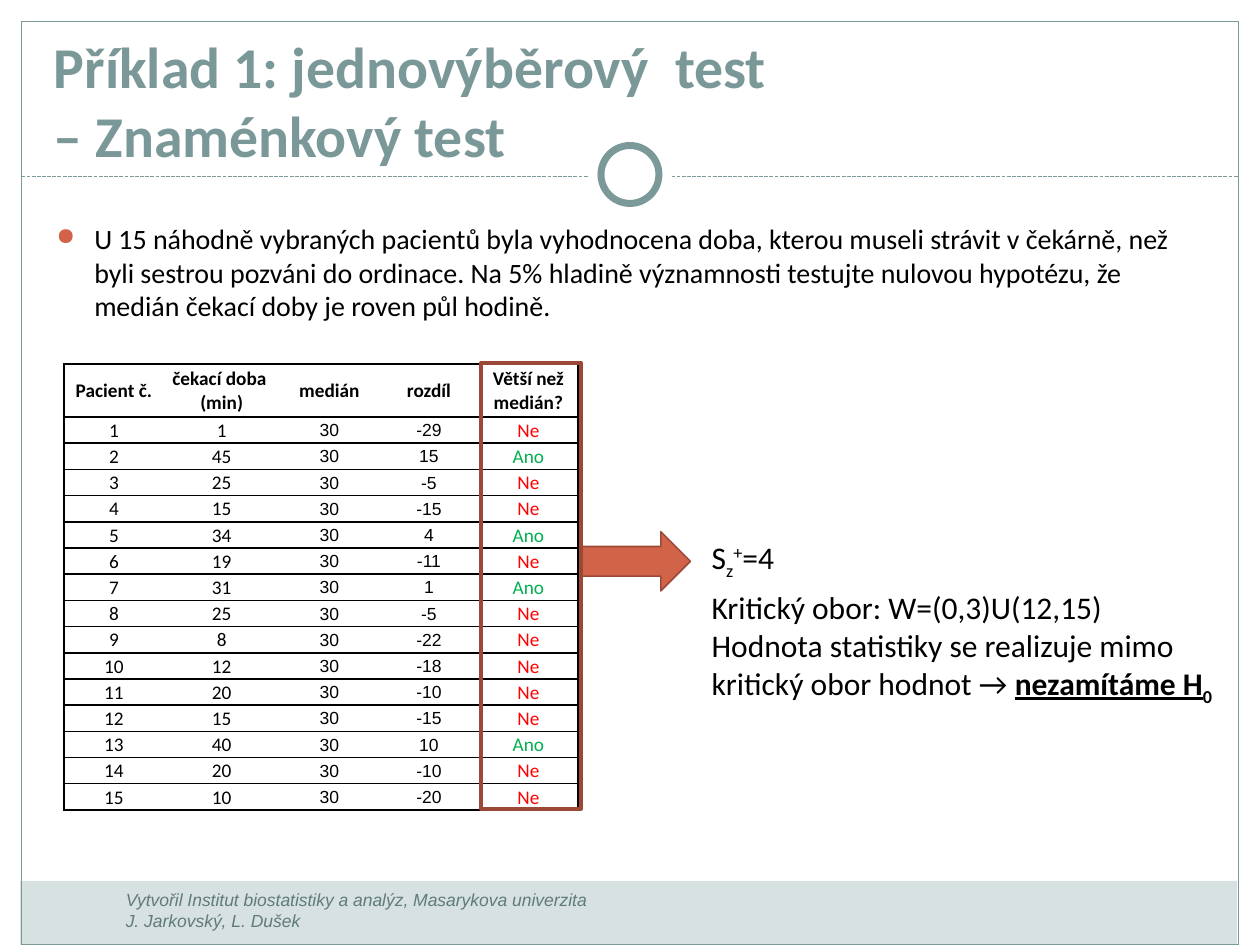
from dataclasses import dataclass

from lxml import etree
from pptx import Presentation
from pptx.dml.color import RGBColor
from pptx.enum.dml import MSO_LINE
from pptx.enum.shapes import MSO_CONNECTOR, MSO_SHAPE
from pptx.enum.text import MSO_ANCHOR, MSO_AUTO_SIZE, PP_ALIGN
from pptx.oxml.ns import qn
from pptx.util import Inches, Pt

RECT, OVAL, ARROW = MSO_SHAPE.RECTANGLE, MSO_SHAPE.OVAL, MSO_SHAPE.RIGHT_ARROW
DASH, STRAIGHT = MSO_LINE.SQUARE_DOT, MSO_CONNECTOR.STRAIGHT
TOP, MID, LOW = MSO_ANCHOR.TOP, MSO_ANCHOR.MIDDLE, MSO_ANCHOR.BOTTOM
CENTER, GROW = PP_ALIGN.CENTER, MSO_AUTO_SIZE.SHAPE_TO_FIT_TEXT

COLS, ROWS = 100, 75  # slide grid of square cells
CELL = Inches(10) / COLS


@dataclass(frozen=True)
class Theme:
    white: str = "FFFFFF"
    ink: str = "000000"
    band: str = "D7E1E1"
    frame: str = "7C999A"
    title: str = "7B9899"
    foot: str = "607B7C"
    accent: str = "D16349"
    edge: str = "9B4936"
    yes: str = "00B050"
    no: str = "FF0000"
    sans: str = "Calibri"
    plain: str = "Arial"
    big: int = 33
    note: int = 18
    body: int = 16
    cell: int = 11
    small: int = 10


T = Theme()
MEDIAN = 30
WAITS = [1, 45, 25, 15, 34, 19, 31, 25, 8, 12, 20, 15, 40, 20, 10]
HEADS = ["Pacient č.", "čekací doba \v(min)", "medián", "rozdíl", "Větší než medián?"]
WIDTHS = [7.9, 9.2, 7.9, 7.9, 7.9]
HEAD_H, ROW_H = 4.2, 2.08
TITLE = "Příklad 1: jednovýběrový  test \v– Znaménkový test"
TASK = ("U 15 náhodně vybraných pacientů byla vyhodnocena doba, kterou museli strávit "
        "v čekárně, než byli sestrou pozváni do ordinace. Na 5% hladině významnosti "
        "testujte nulovou hypotézu, že medián čekací doby je roven půl hodině.")
FOOT = ("Vytvořil Institut biostatistiky a analýz, Masarykova univerzita \v"
        "J. Jarkovský, L. Dušek")


def grid(*spans):
    return [round(span * CELL) for span in spans]


def rgb(code):
    return RGBColor.from_string(code)


def style(font, size, color=T.ink, name=T.sans, bold=False, italic=False):
    font.size, font.name = Pt(size), name
    font.bold, font.italic = bold, italic
    font.color.rgb = rgb(color)


def shape(slide, kind, box, fill=None, line=None, width=1):
    item = slide.shapes.add_shape(kind, *grid(*box))
    item.shadow.inherit = False
    if fill:
        item.fill.solid()
        item.fill.fore_color.rgb = rgb(fill)
    else:
        item.fill.background()
    if line:
        item.line.color.rgb = rgb(line)
        item.line.width = Pt(width)
    else:
        item.line.fill.background()


def rule(slide, start, end):
    item = slide.shapes.add_connector(STRAIGHT, *grid(*start, *end))
    item.line.color.rgb = rgb(T.frame)
    item.line.width = Pt(0.75)
    item.line.dash_style = DASH
    etree.SubElement(item._element.spPr, qn("a:effectLst"))


def text(slide, box, words, size, anchor=TOP, wrap=True, **look):
    """Add a text box with one paragraph and return its frame."""
    frame = slide.shapes.add_textbox(*grid(*box)).text_frame
    frame.word_wrap, frame.vertical_anchor = wrap, anchor
    frame.text = words
    for run in frame.paragraphs[0].runs:
        style(run.font, size, **look)
    return frame


def bullet(para, indent):
    props = para._p.get_or_add_pPr()
    props.set("marL", str(indent))
    props.set("indent", str(-indent))
    color = etree.SubElement(props, qn("a:buClr"))
    etree.SubElement(color, qn("a:srgbClr"), val=T.accent)
    etree.SubElement(props, qn("a:buSzPct"), val="85000")
    etree.SubElement(props, qn("a:buChar"), char="●")


def notes(slide, box, lines):
    """Add unwrapped lines; each line is a list of (words, baseline, strong)."""
    frame = text(slide, box, "", T.note, wrap=False)
    frame.auto_size = GROW
    for i, line in enumerate(lines):
        para = frame.add_paragraph() if i else frame.paragraphs[0]
        for words, base, strong in line:
            run = para.add_run()
            run.text = words
            style(run.font, T.note, bold=strong)
            run.font.underline = strong and not base
            if base:
                run.font._element.set("baseline", str(base * 1000))


def border(cell, shown):
    """Draw the sides named in shown and clear the others."""
    props = cell._tc.get_or_add_tcPr()
    for i, side in enumerate("LRTB"):
        line = etree.Element(qn("a:ln" + side), w=str(Pt(1)))
        if side in shown:
            fill = etree.SubElement(line, qn("a:solidFill"))
            etree.SubElement(fill, qn("a:srgbClr"), val=T.ink)
        else:
            etree.SubElement(line, qn("a:noFill"))
        props.insert(i, line)


def fill_cell(cell, words, **look):
    cell.fill.solid()
    cell.fill.fore_color.rgb = rgb(T.white)
    cell.vertical_anchor = MID
    cell.margin_left = cell.margin_right = cell.margin_top = Inches(0.01)
    cell.margin_bottom = 0
    cell.text_frame.text = words
    para = cell.text_frame.paragraphs[0]
    para.alignment = CENTER
    for run in para.runs:
        style(run.font, **look)


def looks(answer):
    """Give the type style of each column in a data row."""
    main = dict(size=T.cell)
    sums = dict(size=T.small, name=T.plain)
    sign = dict(size=T.cell, color=T.yes if answer == "Ano" else T.no)
    return [main, main, sums, sums, sign]


def table(slide, left, top):
    data = [HEADS]
    for i, wait in enumerate(WAITS, 1):
        diff = wait - MEDIAN
        data.append([str(i), str(wait), str(MEDIAN), str(diff), "Ano" if diff > 0 else "Ne"])
    high = HEAD_H + ROW_H * len(WAITS)
    box = grid(left, top, sum(WIDTHS), high)
    grille = slide.shapes.add_table(len(data), len(HEADS), *box).table
    grille.first_row = grille.horz_banding = False
    for col, width in zip(grille.columns, grid(*WIDTHS)):
        col.width = width
    for r, row in enumerate(data):
        grille.rows[r].height = grid(ROW_H if r else HEAD_H)[0]
        kinds = looks(row[-1]) if r else [dict(size=T.cell, bold=True)] * len(row)
        for c, (words, look) in enumerate(zip(row, kinds)):
            cell = grille.cell(r, c)
            fill_cell(cell, words, **look)
            border(cell, "TB" + {0: "L", len(row) - 1: "R"}.get(c, ""))


def frame(slide):
    """Draw the page frame, footer band and ring."""
    shape(slide, RECT, (1.6, 69.9, 96.6, 5.1), T.band)
    shape(slide, RECT, (1.7, 1.7, 96.6, 73.3), None, T.frame, 0.75)
    rule(slide, (1.7, 14), (98.3, 14))
    for size, line in ((6.7, None), (4.6, T.frame)):
        box = ((COLS - size) / 2, 13.85 - size / 2, size, size)
        shape(slide, OVAL, box, T.white, line, 4)


def main():
    deck = Presentation()
    deck.slide_width, deck.slide_height = grid(COLS, ROWS)
    slide = deck.slides.add_slide(deck.slide_layouts[6])
    frame(slide)
    task = text(slide, (3.5, 17.1, 93.3, 10.1), TASK, T.body)
    bullet(task.paragraphs[0], Inches(0.3))
    text(slide, (9, 70.1, 39.2, 4), FOOT, T.small, color=T.foot, name=T.plain, italic=True)
    text(slide, (3.3, 5.6, 93.3, 8.3), TITLE, T.big, LOW, color=T.title, bold=True)
    table(slide, 5.1, 28.9)
    shape(slide, ARROW, (46.1, 42.2, 8.7, 4.7), T.accent, T.edge, 0.9)
    notes(slide, (55.5, 42.2, 7.2, 4), [
        [("S", 0, False), ("z", -25, False), ("+", 30, False), ("=4", 0, False)]])
    notes(slide, (55.5, 46.2, 42, 10.1), [
        [("Kritický obor: W=(0,3)U(12,15)", 0, False)],
        [("Hodnota statistiky se realizuje mimo", 0, False)],
        [("kritický obor hodnot → ", 0, False), ("nezamítáme H", 0, True), ("0", -25, True)]])
    shape(slide, RECT, (38.2, 28.8, 7.9, 35.4), None, T.edge, 2.25)
    deck.save("out.pptx")


if __name__ == "__main__":
    main()
